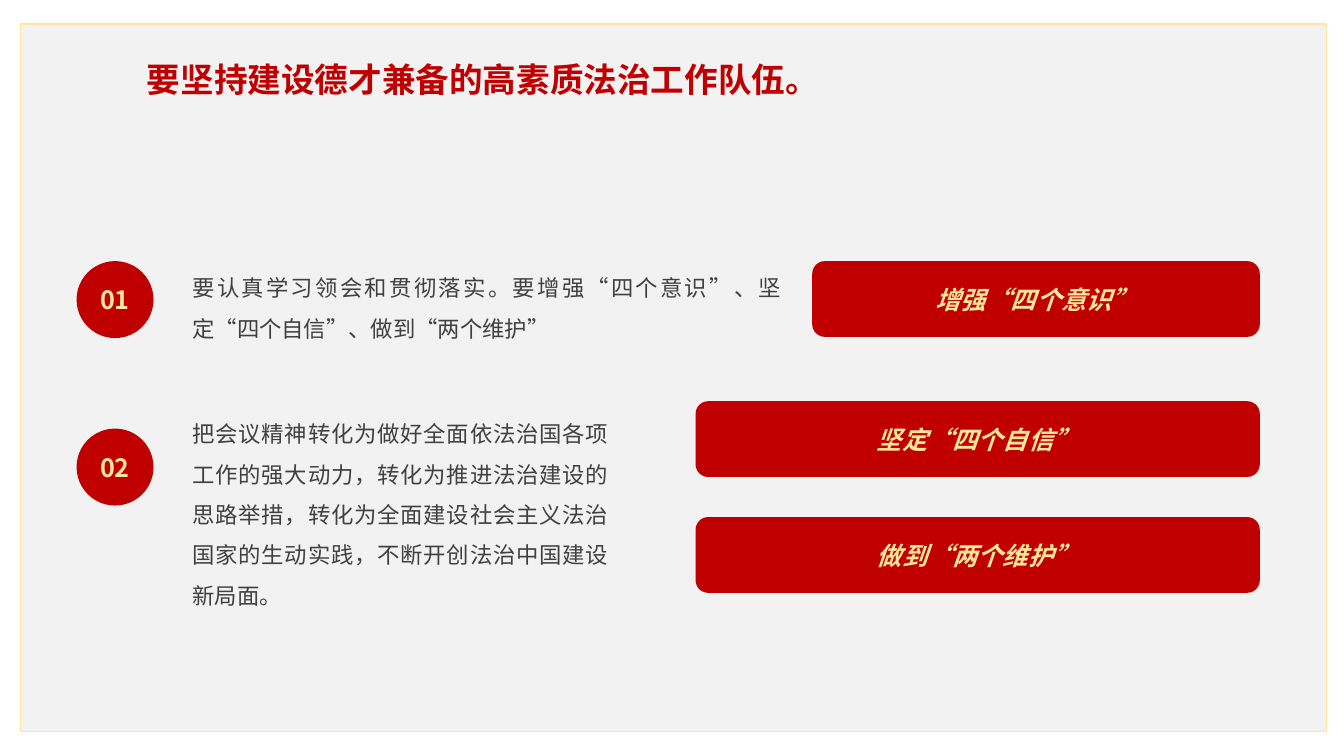
import pptx
import pptx.util
import pptx.dml.color
import pptx.enum.lang
import pptx.enum.shapes
import pptx.enum.text
import pptx.oxml
import pptx.oxml.ns

Cm = pptx.util.Cm
Pt = pptx.util.Pt
Align = pptx.enum.text.PP_ALIGN
Anchor = pptx.enum.text.MSO_ANCHOR
Shape = pptx.enum.shapes.MSO_SHAPE

COLOURS = {"panel": "F2F2F2", "gold": "FFE699", "red": "C00000", "text": "404040"}
FONT = "Noto Sans CJK SC"
FORMATS = {
    "title": {"size": Pt(24), "bold": True},
    "body": {"size": Pt(16)},
    "number": {"size": Pt(18), "bold": True},
    "slogan": {"size": Pt(18), "bold": True, "italic": True},
}
TITLE_SHADOW = (
    f'<a:effectLst {pptx.oxml.ns.nsdecls("a")}>'
    '<a:outerShdw blurRad="38100" dist="38100" dir="2700000" algn="tl">'
    '<a:srgbClr val="000000"><a:alpha val="43000"/></a:srgbClr>'
    "</a:outerShdw></a:effectLst>"
)


def colour(name):
    return pptx.dml.color.RGBColor.from_string(COLOURS[name])


class SlideBuilder:
    def __init__(self, presentation):
        self.slide = presentation.slides.add_slide(presentation.slide_layouts[5])

    def fill_text(self, shape, text, style, colour_name, alignment, anchor, line_spacing=1.0):
        """Put formatted text in the shape and return its latin font element."""
        frame = shape.text_frame
        frame.word_wrap = True
        frame.auto_size = pptx.enum.text.MSO_AUTO_SIZE.NONE
        frame.vertical_anchor = anchor
        paragraph = frame.paragraphs[0]
        paragraph.alignment = alignment
        paragraph.line_spacing = line_spacing
        run = paragraph.add_run()
        run.text = text
        run.font.color.rgb = colour(colour_name)
        settings = {
            "name": FONT,
            "language_id": pptx.enum.lang.MSO_LANGUAGE_ID.SIMPLIFIED_CHINESE,
            **FORMATS[style],
        }
        for attribute, value in settings.items():
            setattr(run.font, attribute, value)
        latin = run.font._element.find(pptx.oxml.ns.qn("a:latin"))
        latin.addnext(pptx.oxml.parse_xml(
            f'<a:ea {pptx.oxml.ns.nsdecls("a")} typeface="{FONT}"/>'))
        return latin

    def title(self, text, left, top, width, height):
        shape = self.slide.shapes.title
        shape.left, shape.top, shape.width, shape.height = map(Cm, (left, top, width, height))
        latin = self.fill_text(shape, text, "title", "red", Align.LEFT, Anchor.TOP)
        latin.addprevious(pptx.oxml.parse_xml(TITLE_SHADOW))

    def shape(self, kind, fill, left, top, width, height):
        shape = self.slide.shapes.add_shape(kind, *map(Cm, (left, top, width, height)))
        shape.shadow.inherit = False
        shape.fill.solid()
        shape.fill.fore_color.rgb = colour(fill)
        shape.line.fill.background()
        return shape

    def panel(self, left, top, width, height):
        """Add the framed background and send it behind the title."""
        panel = self.shape(Shape.RECTANGLE, "panel", left, top, width, height)
        panel.line.color.rgb = colour("gold")
        panel.line.width = Pt(1)
        self.slide.shapes.title.element.addprevious(panel.element)

    def body(self, text, left, top, width, height):
        box = self.slide.shapes.add_textbox(*map(Cm, (left, top, width, height)))
        for side in ("left", "top", "right", "bottom"):
            setattr(box.text_frame, f"margin_{side}", 0)
        self.fill_text(box, text, "body", "text", Align.JUSTIFY, Anchor.TOP, 1.5)

    def label(self, kind, text, style, left, top, width, height):
        """Add a red shape with centred gold text."""
        shape = self.shape(kind, "red", left, top, width, height)
        self.fill_text(shape, text, style, "gold", Align.CENTER, Anchor.MIDDLE)


def main():
    presentation = pptx.Presentation()
    presentation.slide_width = Cm(33.87)
    presentation.slide_height = Cm(19.05)
    builder = SlideBuilder(presentation)
    builder.panel(0.51, 0.61, 32.92, 17.83)
    builder.title("要坚持建设德才兼备的高素质法治工作队伍。", 3.45, 1.35, 17.5, 1.27)

    points = [
        ("要认真学习领会和贯彻落实。要增强“四个意识”、坚定“四个自信”、做到“两个维护”",
         6.58, 14.86, 1.96, 6.58),
        ("把会议精神转化为做好全面依法治国各项工作的强大动力，转化为推进法治建设的思路举措，"
         "转化为全面建设社会主义法治国家的生动实践，不断开创法治中国建设新局面。",
         10.26, 10.49, 5.03, 10.8),
    ]
    for number, (text, top, width, height, circle_top) in enumerate(points, 1):
        builder.body(text, 4.85, top, width, height)
        builder.label(Shape.OVAL, f"{number:02}", "number", 1.93, circle_top, 1.94, 1.94)

    slogans_right = 31.75
    slogans = [
        ("增强“四个意识”", 6.58, 11.28),
        ("坚定“四个自信”", 10.11, 14.22),
        ("做到“两个维护”", 13.03, 14.22),
    ]
    for text, top, width in slogans:
        builder.label(Shape.ROUNDED_RECTANGLE, text, "slogan",
                      slogans_right - width, top, width, 1.91)

    presentation.save("out.pptx")


if __name__ == "__main__":
    main()
